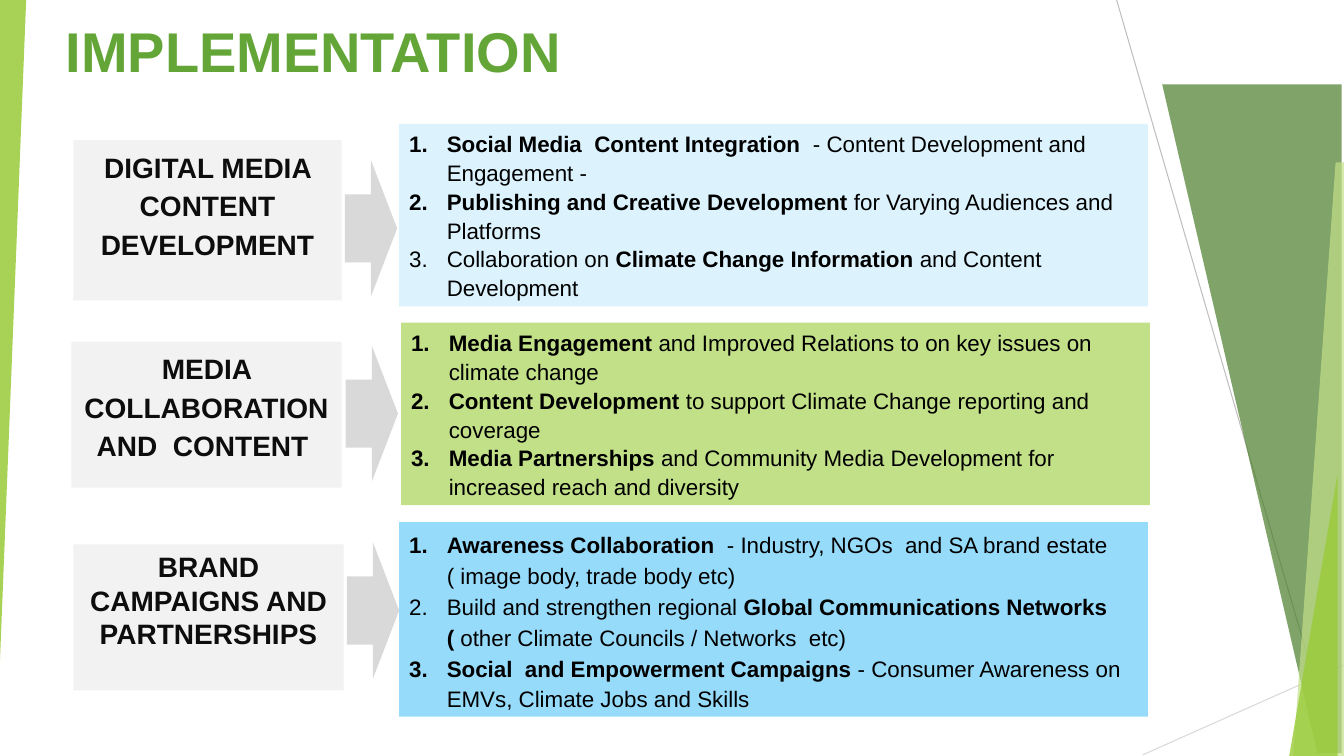
from dataclasses import dataclass

from lxml.etree import SubElement
from pptx import Presentation
from pptx.dml.color import RGBColor
from pptx.enum.shapes import MSO_CONNECTOR, MSO_SHAPE
from pptx.enum.text import MSO_ANCHOR as Anchor, PP_ALIGN as Align
from pptx.oxml.ns import qn
from pptx.shapes.autoshape import Shape
from pptx.slide import Slide
from pptx.util import Cm, Pt

FONT = "Arial"
BLACK = RGBColor(0x00, 0x00, 0x00)
INK = RGBColor(0x0D, 0x0D, 0x0D)
TITLE_GREEN = RGBColor(0x63, 0xA5, 0x37)
DARK_GREEN = RGBColor(0x4A, 0x7C, 0x29)
BRIGHT_GREEN = RGBColor(0x99, 0xCB, 0x38)
PALE_GREEN = RGBColor(0xC2, 0xE0, 0x88)
PALE_BLUE = RGBColor(0xDC, 0xF3, 0xFE)
SKY_BLUE = RGBColor(0x97, 0xDB, 0xFB)
LABEL_GRAY = RGBColor(0xF2, 0xF2, 0xF2)
LIGHT_GRAY = RGBColor(0xD9, 0xD9, 0xD9)
MID_GRAY = RGBColor(0xBF, 0xBF, 0xBF)

Point = tuple[float, float]
Box = tuple[float, float, float, float]


@dataclass
class Ray:
    start: Point
    end: Point
    color: RGBColor


@dataclass
class Facet:
    points: list[Point]
    color: RGBColor
    opacity: int


@dataclass
class Stream:
    label: str
    label_box: Box
    label_spacing: float
    arrow_box: Box
    actions: list[str]  # text between bars is bold
    actions_box: Box
    actions_spacing: float
    color: RGBColor


RAYS = [
    Ray((28.14, 0), (33.55, 18.59), MID_GRAY),
    Ray((33.87, 16.76), (28.8, 19.02), LIGHT_GRAY),
]
FACETS = [
    Facet([(29.29, 2.13), (33.81, 2.13), (33.81, 18.97), (33.2, 18.97)], DARK_GREEN, 70),
    Facet([(33.66, 4.09), (33.87, 4.09), (33.87, 19.05), (32.59, 19.05)], PALE_GREEN, 70),
    Facet([(33.71, 11.94), (33.71, 19.05), (32.49, 19.05)], BRIGHT_GREEN, 80),
    Facet([(0, 0), (0.66, 0), (0, 16.66)], BRIGHT_GREEN, 85),
]
STREAMS = [
    Stream(
        "DIGITAL MEDIA CONTENT DEVELOPMENT", (1.85, 3.53, 6.76, 4.04), 1.15,
        (8.69, 4.04, 1.32, 3.43),
        ["|Social Media  Content Integration  |- Content Development and Engagement -",
         "|Publishing and Creative Development |for Varying Audiences and Platforms",
         "Collaboration on |Climate Change Information |and Content Development"],
        (10.06, 3.12, 18.87, 4.6), 1.07, PALE_BLUE,
    ),
    Stream(
        "MEDIA COLLABORATION AND  CONTENT ", (1.8, 8.61, 6.81, 3.68), 1.15,
        (8.71, 8.71, 1.32, 3.43),
        ["|Media Engagement |and Improved Relations to on key issues on climate change",
         "|Content Development |to support Climate Change reporting and coverage",
         "|Media Partnerships |and Community Media Development for increased reach "
         "and diversity"],
        (10.11, 8.13, 18.87, 4.6), 1.07, PALE_GREEN,
    ),
    Stream(
        "BRAND CAMPAIGNS AND PARTNERSHIPS", (1.85, 13.72, 6.81, 3.68), 1.0,
        (8.74, 13.67, 1.32, 3.43),
        ["|Awareness Collaboration  |- Industry, NGOs  and SA brand estate  "
         "( image body, trade body etc)",
         "Build and strengthen regional |Global Communications Networks (| other Climate "
         "Councils / Networks  etc)",
         "|Social  and Empowerment Campaigns |- Consumer Awareness on EMVs, "
         "Climate Jobs and Skills"],
        (10.06, 13.16, 18.87, 4.9), 1.15, SKY_BLUE,
    ),
]


def paint(shape: Shape, color: RGBColor) -> None:
    shape.shadow.inherit = False
    shape.fill.solid()
    shape.fill.fore_color.rgb = color
    shape.line.fill.background()


def add_ray(slide: Slide, ray: Ray) -> None:
    ends = [Cm(value) for value in ray.start + ray.end]
    connector = slide.shapes.add_connector(MSO_CONNECTOR.STRAIGHT, *ends)
    connector.line.color.rgb = ray.color
    connector.line.width = Pt(0.75)
    SubElement(connector.element.spPr, qn("a:effectLst"))


def add_facet(slide: Slide, facet: Facet) -> None:
    first, *rest = [(Cm(x), Cm(y)) for x, y in facet.points]
    builder = slide.shapes.build_freeform(*first)
    builder.add_line_segments(rest)
    shape = builder.convert_to_shape()
    paint(shape, facet.color)
    color = shape.element.spPr.find(qn("a:solidFill"))[0]
    SubElement(color, qn("a:alpha"), val=str(facet.opacity * 1000))


def add_block(slide: Slide, kind: MSO_SHAPE, box: Box, color: RGBColor) -> Shape:
    shape = slide.shapes.add_shape(kind, *[Cm(value) for value in box])
    paint(shape, color)
    shape.text_frame.word_wrap = True
    shape.text_frame.vertical_anchor = Anchor.TOP
    return shape


def add_label(slide: Slide, stream: Stream) -> None:
    shape = add_block(slide, MSO_SHAPE.RECTANGLE, stream.label_box, LABEL_GRAY)
    shape.text_frame.text = stream.label
    paragraph = shape.text_frame.paragraphs[0]
    paragraph.alignment = Align.CENTER
    paragraph.line_spacing = stream.label_spacing
    font = paragraph.runs[0].font
    font.name, font.size, font.bold = FONT, Pt(20), True
    font.color.rgb = INK


def add_actions(slide: Slide, stream: Stream) -> None:
    frame = add_block(slide, MSO_SHAPE.RECTANGLE, stream.actions_box, stream.color).text_frame
    for index, action in enumerate(stream.actions):
        paragraph = frame.add_paragraph() if index else frame.paragraphs[0]
        paragraph.alignment = Align.LEFT
        paragraph.line_spacing = stream.actions_spacing
        properties = paragraph._p.get_or_add_pPr()
        properties.set("marL", str(Cm(0.95)))
        properties.set("indent", str(-Cm(0.95)))
        SubElement(properties, qn("a:buFont"), typeface="+mj-lt")
        SubElement(properties, qn("a:buAutoNum"), type="arabicPeriod")
        for position, segment in enumerate(action.split("|")):
            if segment:
                run = paragraph.add_run()
                run.text = segment
                run.font.name, run.font.size = FONT, Pt(16)
                run.font.bold = position % 2 == 1
                run.font.color.rgb = BLACK


def add_title(slide: Slide) -> None:
    title = slide.shapes.title
    title.left, title.top, title.width, title.height = Cm(1.4), Cm(0.05), Cm(24.87), Cm(2.64)
    title.text_frame.text = "IMPLEMENTATION"
    title.text_frame.vertical_anchor = Anchor.MIDDLE
    paragraph = title.text_frame.paragraphs[0]
    paragraph.alignment = Align.LEFT
    paragraph.line_spacing = 0.9
    font = paragraph.runs[0].font
    font.name, font.size, font.bold = FONT, Pt(40), True
    font.color.rgb = TITLE_GREEN


def main() -> None:
    presentation = Presentation()
    presentation.slide_width, presentation.slide_height = Cm(33.87), Cm(19.05)
    slide = presentation.slides.add_slide(presentation.slide_layouts[5])

    # Background decoration
    for ray in RAYS:
        add_ray(slide, ray)
    for facet in FACETS:
        add_facet(slide, facet)

    # Title and the three work streams
    add_title(slide)
    for stream in STREAMS:
        add_label(slide, stream)
        add_actions(slide, stream)
        add_block(slide, MSO_SHAPE.RIGHT_ARROW, stream.arrow_box, LIGHT_GRAY)

    presentation.save("out.pptx")


if __name__ == "__main__":
    main()
